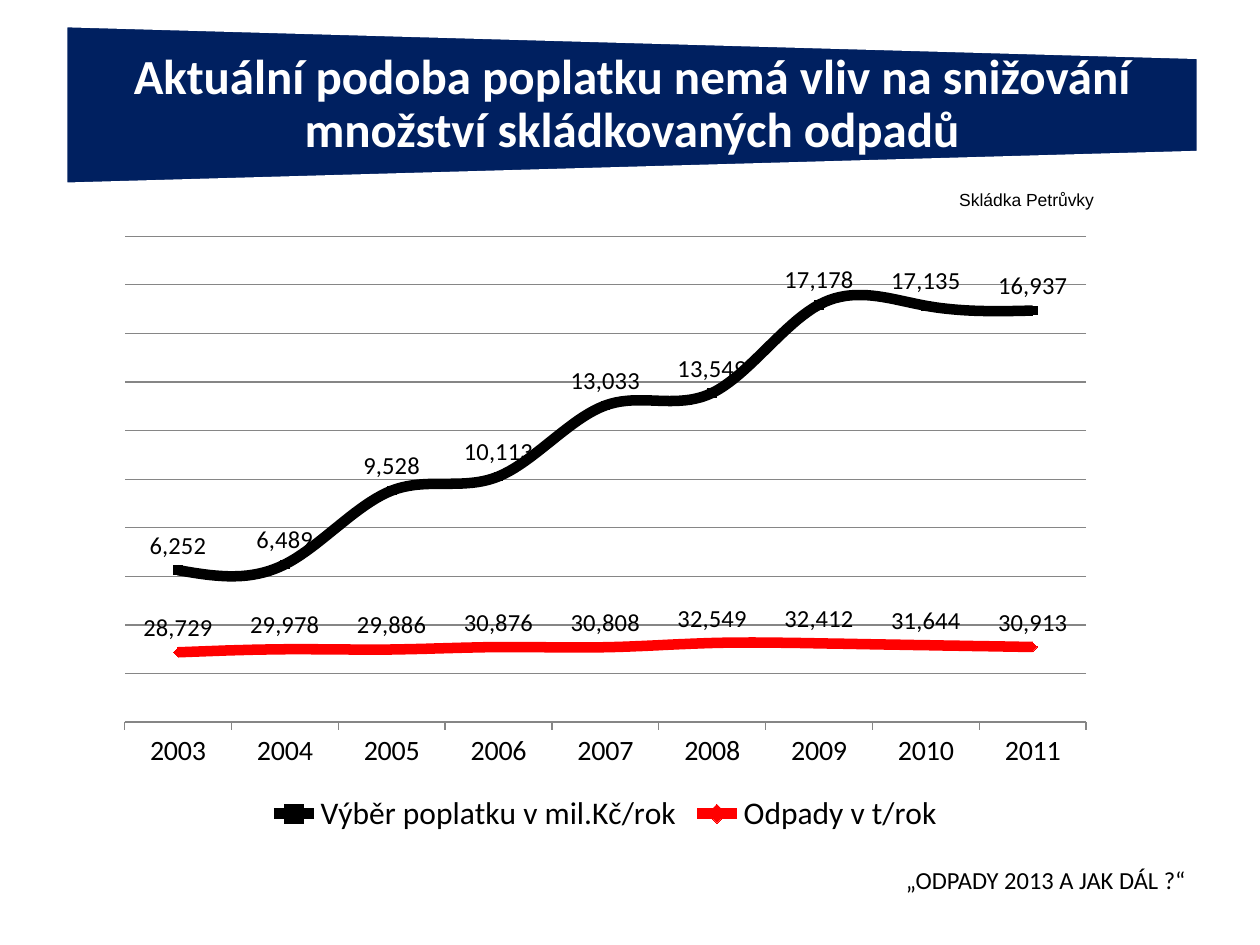
import pptx
import pptx.util
import pptx.chart.data
import pptx.dml.color
import pptx.enum.chart
import pptx.enum.shapes
import pptx.enum.text

TITLE = "Aktuální podoba poplatku nemá vliv na snižování množství skládkovaných odpadů"
FOOTER = "„ODPADY 2013 A JAK DÁL ?“"
SITE = "Skládka Petrůvky"
YEARS = [str(year) for year in range(2003, 2012)]
FEES = [6252, 6489, 9528, 10113, 13033, 13549, 17178, 17135, 16937]
FEE_SCALE = 10
WASTE = [28729, 29978, 29886, 30876, 30808, 32549, 32412, 31644, 30913]
COLORS = {"navy": "002060", "white": "FFFFFF", "black": "000000",
          "red": "FF0000", "grid": "868686"}
MARKER = pptx.enum.chart.XL_MARKER_STYLE
SERIES = [
    {"name": "Výběr poplatku v mil.Kč/rok", "values": [fee * FEE_SCALE for fee in FEES],
     "color": "black", "marker": MARKER.SQUARE, "labels": [f"{fee:,}" for fee in FEES]},
    {"name": "Odpady v t/rok", "values": WASTE,
     "color": "red", "marker": MARKER.DIAMOND, "labels": []},
]
WIDTH, HEIGHT = 10, 7.5
BANNER = (0.052, 0.027, 0.899, 0.168)
TITLE_BOX = (0.052, 0.061, 0.899, 0.101)
SITE_BOX = (0.642, 0.193, 0.236, 0.036)
CHART_BOX = (0.083, 0.237, 0.795, 0.651)
FOOTER_BOX = (0.634, 0.909, 0.317, 0.069)
PLOT = {"x": 0.02, "y": 0.02, "w": 0.96, "h": 0.79}


def rgb(name):
    return pptx.dml.color.RGBColor.from_string(COLORS[name])


def place(box):
    sizes = (WIDTH, HEIGHT, WIDTH, HEIGHT)
    return [pptx.util.Inches(share * size) for share, size in zip(box, sizes)]


def style_font(font, size, color="black", name="Calibri", bold=False):
    font.size = pptx.util.Pt(size)
    font.name = name
    font.bold = bold
    font.color.rgb = rgb(color)


def add_text(slide, text, box, size, align="RIGHT", anchor="TOP", margins=(0.1, 0.05),
             spacing=1.0, **font_format):
    frame = slide.shapes.add_textbox(*place(box)).text_frame
    frame.word_wrap = True
    frame.vertical_anchor = pptx.enum.text.MSO_ANCHOR[anchor]
    frame.margin_left = frame.margin_right = pptx.util.Inches(margins[0])
    frame.margin_top = frame.margin_bottom = pptx.util.Inches(margins[1])
    paragraph = frame.paragraphs[0]
    paragraph.alignment = pptx.enum.text.PP_ALIGN[align]
    paragraph.line_spacing = spacing
    run = paragraph.add_run()
    run.text = text
    style_font(run.font, size, **font_format)


def add_banner(slide):
    left, top, width, height = place(BANNER)
    shape = slide.shapes.add_shape(
        pptx.enum.shapes.MSO_SHAPE.FLOWCHART_MANUAL_OPERATION,
        left + (width - height) // 2, top + (height - width) // 2, height, width)
    shape.rotation = 270
    shape.shadow.inherit = False
    shape.fill.solid()
    shape.fill.fore_color.rgb = rgb("navy")
    shape.line.color.rgb = rgb("white")
    shape.line.width = pptx.util.Pt(2)


def set_plot_layout(chart):
    plot_area = chart._chartSpace.chart.plotArea
    for old in plot_area.xpath("c:layout"):
        plot_area.remove(old)
    settings = {"layoutTarget": "inner", "xMode": "edge", "yMode": "edge", **PLOT}
    items = "".join(f'<c:{key} val="{value}"/>' for key, value in settings.items())
    namespace = "http://schemas.openxmlformats.org/drawingml/2006/chart"
    plot_area.insert(0, pptx.oxml.parse_xml(
        f'<c:layout xmlns:c="{namespace}"><c:manualLayout>{items}</c:manualLayout></c:layout>'))


def style_axes(chart):
    tick = pptx.enum.chart.XL_TICK_MARK
    years = chart.category_axis
    years.major_tick_mark = tick.OUTSIDE
    years.format.line.color.rgb = rgb("grid")
    style_font(years.tick_labels.font, 16)
    values = chart.value_axis
    values.minimum_scale, values.maximum_scale, values.major_unit = 0, 200000, 20000
    values.has_major_gridlines = True
    values.major_gridlines.format.line.color.rgb = rgb("grid")
    values.visible = False


def style_series(series, content):
    color = rgb(content["color"])
    series.smooth = True
    series.format.line.color.rgb = color
    series.format.line.width = pptx.util.Pt(6)
    series.marker.style = content["marker"]
    series.marker.size = 5
    series.marker.format.fill.solid()
    series.marker.format.fill.fore_color.rgb = color
    series.marker.format.line.color.rgb = color
    above = pptx.enum.chart.XL_LABEL_POSITION.ABOVE
    labels = series.data_labels
    labels.show_value = True
    labels.position = above
    labels.number_format = "#,##0"
    labels.number_format_is_linked = False
    style_font(labels.font, 14)
    for index, text in enumerate(content["labels"]):
        label = series.points[index].data_label
        run = label.text_frame.paragraphs[0].add_run()
        run.text = text
        style_font(run.font, 14)
        label.position = above


def add_line_chart(slide):
    data = pptx.chart.data.CategoryChartData()
    data.categories = YEARS
    for content in SERIES:
        data.add_series(content["name"], content["values"])
    chart = slide.shapes.add_chart(
        pptx.enum.chart.XL_CHART_TYPE.LINE_MARKERS, *place(CHART_BOX), data).chart
    style_font(chart.font, 18)
    chart.has_title = False
    chart.has_legend = True
    chart.legend.position = pptx.enum.chart.XL_LEGEND_POSITION.BOTTOM
    chart.legend.include_in_layout = False
    style_font(chart.legend.font, 18)
    chart.plots[0].vary_by_categories = False
    set_plot_layout(chart)
    style_axes(chart)
    for series, content in zip(chart.plots[0].series, SERIES):
        style_series(series, content)


def main():
    presentation = pptx.Presentation()
    presentation.slide_width = pptx.util.Inches(WIDTH)
    presentation.slide_height = pptx.util.Inches(HEIGHT)
    slide = presentation.slides.add_slide(presentation.slide_layouts[6])
    add_banner(slide)
    add_text(slide, TITLE, TITLE_BOX, 28, align="CENTER", anchor="MIDDLE",
             margins=(0.19, 0), spacing=0.9, color="white", bold=True)
    add_text(slide, FOOTER, FOOTER_BOX, 14)
    add_line_chart(slide)
    add_text(slide, SITE, SITE_BOX, 10, name="Arial")
    presentation.save("out.pptx")


if __name__ == "__main__":
    main()
